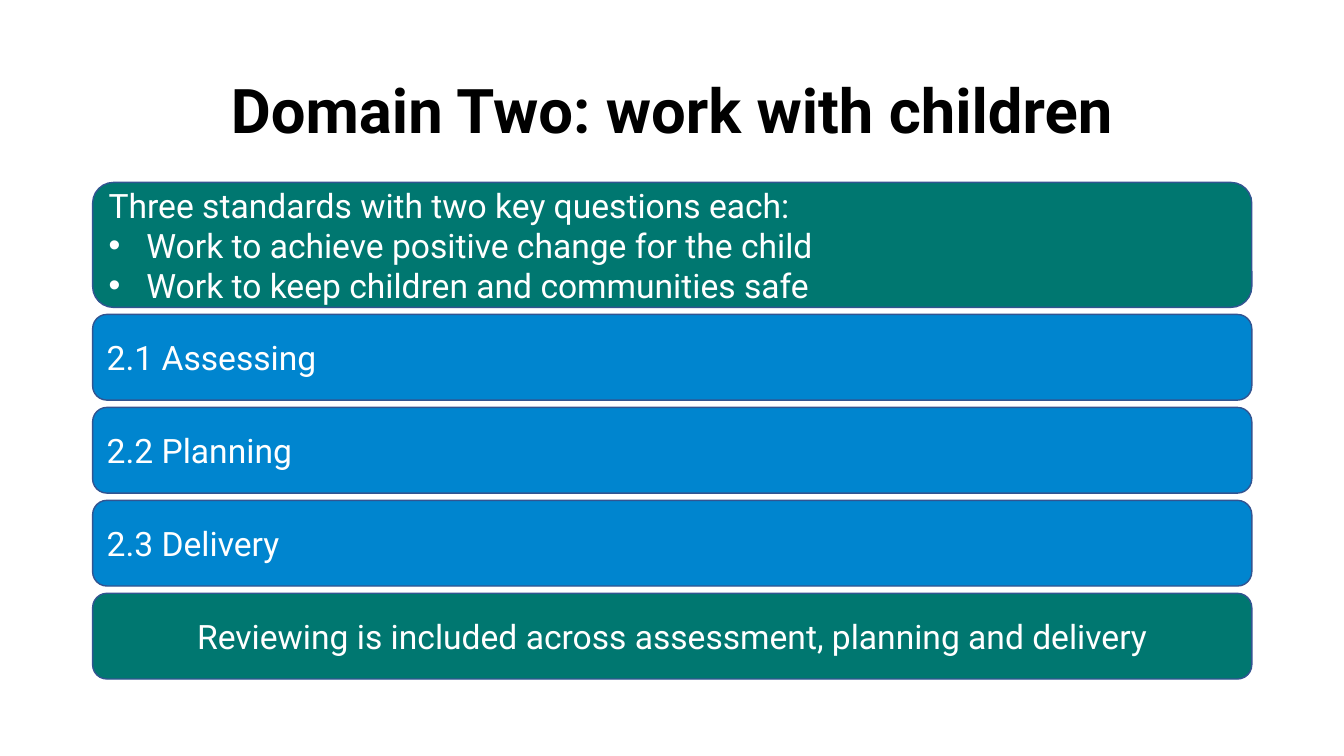
from lxml.etree import SubElement
from pptx import Presentation
from pptx.dml.color import RGBColor
from pptx.enum.shapes import MSO_SHAPE
from pptx.enum.text import MSO_ANCHOR, MSO_AUTO_SIZE, PP_ALIGN
from pptx.oxml.ns import qn
from pptx.util import Pt

GREEN, BLUE, OUTLINE = "007770", "0085CF", "325491"
LEFT, WIDTH = 66.2, 828
BAR_TOP, BAR_HEIGHT, BAR_PITCH = 224.6, 61.2, 66.4


def color(value):
    return RGBColor.from_string(value)


def write(paragraph, text, size=24, ink="FFFFFF", bold=False,
          align=PP_ALIGN.LEFT, bullet=False, spacing=None):
    if bullet:
        properties = paragraph._p.get_or_add_pPr()
        properties.set("marL", str(Pt(27)))
        properties.set("indent", str(-Pt(27)))
        SubElement(properties, qn("a:buFont"), typeface="Arial")
        SubElement(properties, qn("a:buChar"), char="•")
    paragraph.alignment = align
    if spacing:
        paragraph.line_spacing = spacing
    run = paragraph.add_run()
    run.text = text
    run.font.name = "Roboto"
    run.font.size = Pt(size)
    run.font.bold = bold
    run.font.color.rgb = color(ink)


presentation = Presentation()
presentation.slide_width = Pt(960)
presentation.slide_height = Pt(540)
slide = presentation.slides.add_slide(presentation.slide_layouts[5])

title = slide.shapes.title
title.left, title.top = Pt(LEFT), Pt(28.8)
title.width, title.height = Pt(WIDTH), Pt(104.4)
title.text_frame.vertical_anchor = MSO_ANCHOR.MIDDLE
title.text_frame.auto_size = MSO_AUTO_SIZE.NONE
write(title.text_frame.paragraphs[0], "Domain Two: work with children",
      size=44, ink="000000", bold=True, align=PP_ALIGN.CENTER, spacing=0.9)

introduction = [
    "Three standards with two key questions each:",
    "Work to achieve positive change for the child",
    "Work to keep children and communities safe",
]
standards = ["2.1 Assessing", "2.2 Planning", "2.3 Delivery"]
review = "Reviewing is included across assessment, planning and delivery"

panels = [(130.3, 89.3, GREEN, PP_ALIGN.LEFT, introduction)]
for row, standard in enumerate(standards):
    panels.append((BAR_TOP + row * BAR_PITCH, BAR_HEIGHT, BLUE, PP_ALIGN.LEFT, [standard]))
panels.append((BAR_TOP + len(standards) * BAR_PITCH, BAR_HEIGHT, GREEN, PP_ALIGN.CENTER, [review]))

for top, height, fill, align, lines in panels:
    panel = slide.shapes.add_shape(
        MSO_SHAPE.ROUNDED_RECTANGLE, Pt(LEFT), Pt(top), Pt(WIDTH), Pt(height))
    panel.shadow.inherit = False
    panel.fill.solid()
    panel.fill.fore_color.rgb = color(fill)
    panel.line.color.rgb = color(OUTLINE)
    panel.line.width = Pt(1)
    frame = panel.text_frame
    frame.word_wrap = True
    frame.vertical_anchor = MSO_ANCHOR.MIDDLE
    for index, text in enumerate(lines):
        paragraph = frame.add_paragraph() if index else frame.paragraphs[0]
        write(paragraph, text, align=align, bullet=index > 0)

presentation.save("out.pptx")
